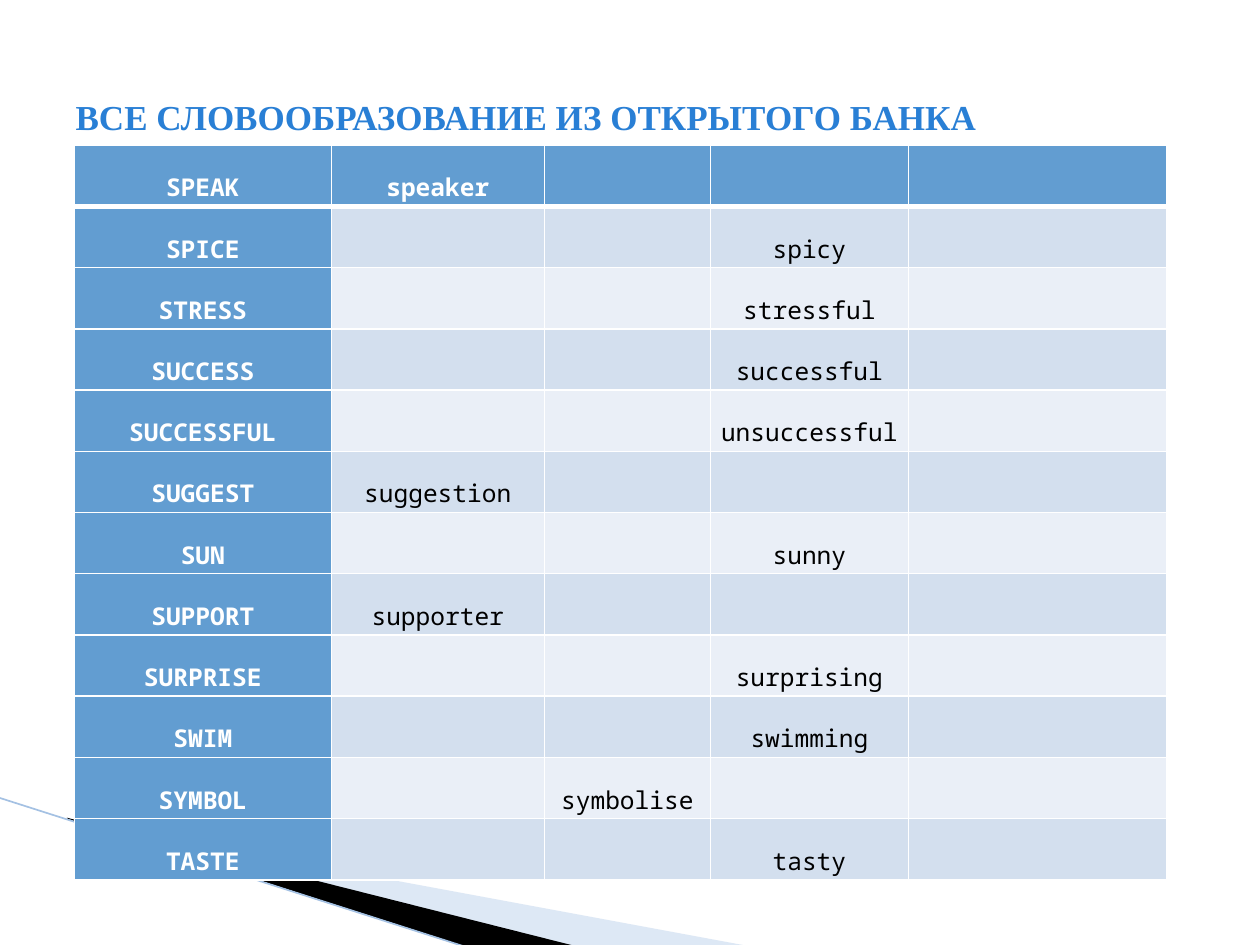
import pptx
import pptx.dml.color
import pptx.enum.shapes
import pptx.enum.text
import pptx.oxml
import pptx.oxml.ns
import pptx.util

Pt = pptx.util.Pt
COLORS = {
    "title": "297FD5",
    "header": "629DD1",
    "odd": "D3DFEE",
    "even": "EAEFF7",
    "white": "FFFFFF",
    "black": "000000",
    "pale_wedge": "ABC6E6",
    "edge": "A4C1E3",
}
RGB = {name: pptx.dml.color.RGBColor.from_string(value) for name, value in COLORS.items()}
NS = pptx.oxml.ns.nsdecls("a")


def add_wedge(points, color):
    builder = slide.shapes.build_freeform(Pt(points[0][0]), Pt(points[0][1]))
    builder.add_line_segments([(Pt(x), Pt(y)) for x, y in points[1:]], close=True)
    wedge = builder.convert_to_shape()
    wedge.shadow.inherit = False
    wedge.fill.solid()
    wedge.fill.fore_color.rgb = RGB[color]
    wedge.line.fill.background()
    return wedge


def add_border(cell, side, width):
    cell._tc.get_or_add_tcPr().append(pptx.oxml.parse_xml(
        f'<a:ln{side} {NS} w="{Pt(width)}"><a:solidFill>'
        f'<a:srgbClr val="{COLORS["white"]}"/></a:solidFill></a:ln{side}>'))


deck = pptx.Presentation()
deck.slide_width, deck.slide_height = Pt(720), Pt(540)
slide = deck.slides.add_slide(deck.slide_layouts[5])

# Decoration in the lower left corner
pale_wedge = add_wedge([(39.6, 468.7), (428.4, 540.7), (328.3, 540.7), (39.6, 468)], "pale_wedge")
pale_color = pale_wedge.fill._xPr.find(".//" + pptx.oxml.ns.qn("a:srgbClr"))
pale_color.append(pptx.oxml.parse_xml(f'<a:alpha {NS} val="40000"/>'))
add_wedge([(38.2, 467.3), (329, 540.7), (267.8, 541.4), (38.9, 468)], "black")
edge = slide.shapes.add_connector(
    pptx.enum.shapes.MSO_CONNECTOR.STRAIGHT, Pt(-0.7), Pt(455.8), Pt(267.1), Pt(541.4))
edge.line.color.rgb = RGB["edge"]
edge.line.width = Pt(0.95)
edge._element.spPr.append(pptx.oxml.parse_xml(f"<a:effectLst {NS}/>"))

# Title
title = slide.shapes.title
title.left, title.top, title.width, title.height = Pt(36), Pt(21.6), Pt(648), Pt(90)
title.text_frame.text = "ВСЕ СЛОВООБРАЗОВАНИЕ ИЗ ОТКРЫТОГО БАНКА"
title.text_frame.vertical_anchor = pptx.enum.text.MSO_ANCHOR.MIDDLE
heading = title.text_frame.paragraphs[0]
heading.alignment = pptx.enum.text.PP_ALIGN.LEFT
heading.font.name = "Times New Roman"
heading.font.size = Pt(20)
heading.font.bold = True
heading.font.color.rgb = RGB["title"]

# Word formation table: root word, column of the derived word, derived word
WORDS = [
    ("SPEAK", 1, "speaker"),
    ("SPICE", 3, "spicy"),
    ("STRESS", 3, "stressful"),
    ("SUCCESS", 3, "successful"),
    ("SUCCESSFUL", 3, "unsuccessful"),
    ("SUGGEST", 1, "suggestion"),
    ("SUN", 3, "sunny"),
    ("SUPPORT", 1, "supporter"),
    ("SURPRISE", 3, "surprising"),
    ("SWIM", 3, "swimming"),
    ("SYMBOL", 2, "symbolise"),
    ("TASTE", 3, "tasty"),
]
COLUMN_WIDTHS = [146.9, 121.7, 95, 113, 147.6]
ROW_HEIGHT = 35
word_table = slide.shapes.add_table(
    len(WORDS), len(COLUMN_WIDTHS), Pt(42.5), Pt(83),
    Pt(sum(COLUMN_WIDTHS)), Pt(ROW_HEIGHT * len(WORDS))).table
word_table.first_col = True
for column, width in zip(word_table.columns, COLUMN_WIDTHS):
    column.width = Pt(width)

for row, (root, derived_column, derived) in enumerate(WORDS):
    word_table.rows[row].height = Pt(ROW_HEIGHT)
    texts = {0: root, derived_column: derived}
    for column in range(len(COLUMN_WIDTHS)):
        cell = word_table.cell(row, column)
        is_header = row == 0 or column == 0
        add_border(cell, "L", 1)
        add_border(cell, "R", 1)
        add_border(cell, "T", 3 if row == 1 else 1)
        add_border(cell, "B", 3 if row == 0 else 1)
        cell.fill.solid()
        cell.fill.fore_color.rgb = RGB["header" if is_header else "odd" if row % 2 else "even"]
        if column not in texts:
            continue
        cell.vertical_anchor = pptx.enum.text.MSO_ANCHOR.BOTTOM
        cell.margin_left = cell.margin_right = Pt(2.2)
        cell.margin_top = cell.margin_bottom = Pt(1.4)
        cell.text = texts[column]
        word = cell.text_frame.paragraphs[0]
        word.alignment = pptx.enum.text.PP_ALIGN.CENTER
        word.line_spacing = 1.5
        word.font.name = "Noto Sans Mono"
        word.font.size = Pt(14)
        word.font.bold = is_header
        word.font.color.rgb = RGB["white" if is_header else "black"]

deck.save("out.pptx")
